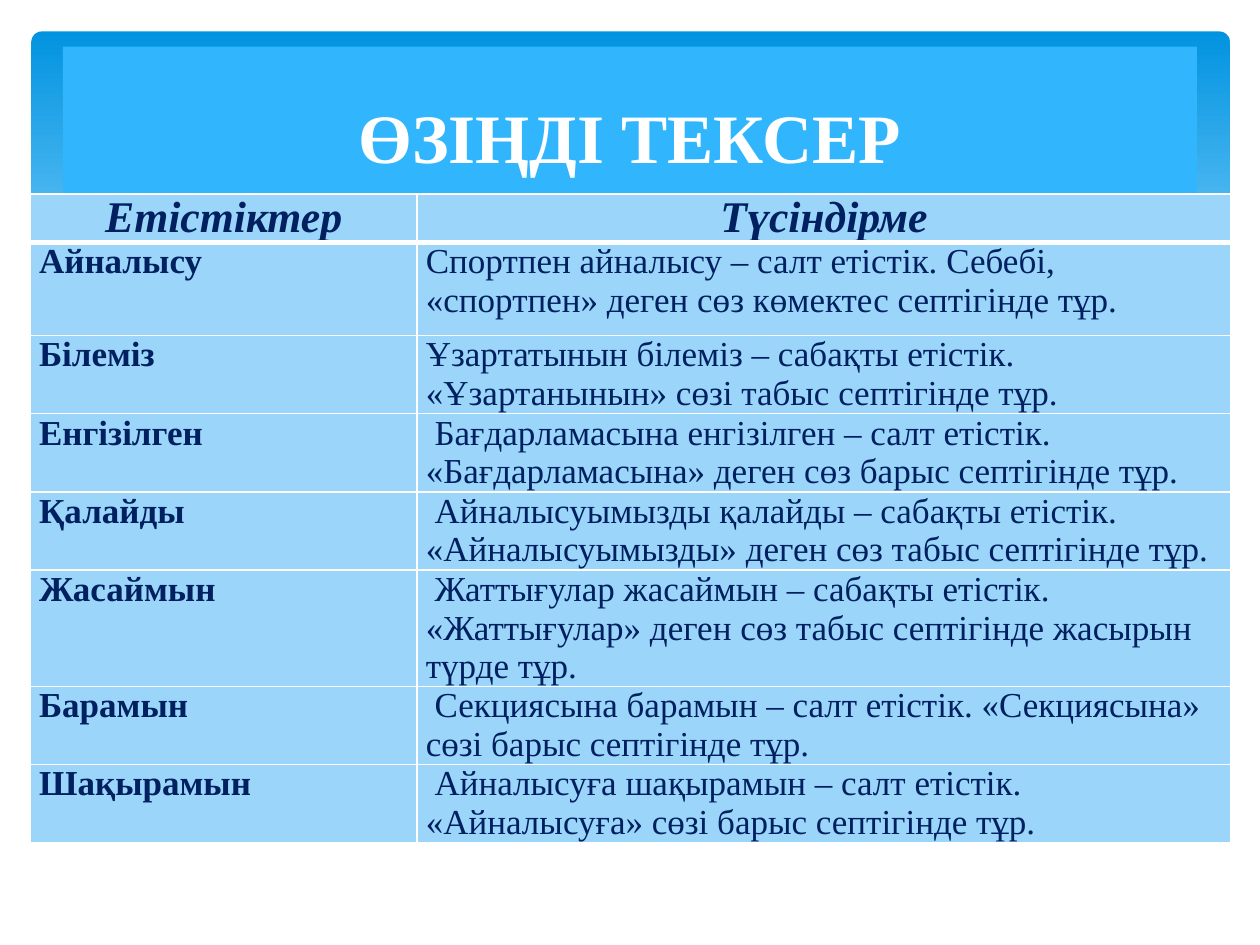
"""Build a Kazakh self-check slide with a table explaining verb types."""
from dataclasses import dataclass

import pptx
import pptx.dml.color
import pptx.enum.shapes
import pptx.enum.text
import pptx.oxml
import pptx.oxml.ns
import pptx.util

Inches = pptx.util.Inches
Pt = pptx.util.Pt
Rgb = pptx.dml.color.RGBColor.from_string
Align = pptx.enum.text.PP_ALIGN
Preset = pptx.enum.shapes.MSO_SHAPE


@dataclass(frozen=True)
class Theme:
    font: str = "Times New Roman"
    banner_top: str = "0293E0"
    banner_bottom: str = "83D3FE"
    title_fill: str = "31B6FD"
    cell_fill: str = "9BD5FA"
    white: str = "FFFFFF"
    navy: str = "002060"
    title_size: float = 39.6
    header_size: int = 25
    body_size: int = 20


theme = Theme()


def style_paragraph(para, size, color, align, bold=False, italic=False):
    para.alignment = align
    para.font.name = theme.font
    para.font.size = Pt(size)
    para.font.bold = bold
    para.font.italic = italic
    para.font.color.rgb = Rgb(color)


def add_borders(cell, top, bottom):
    widths = {"lnL": 1, "lnR": 1, "lnT": top, "lnB": bottom}
    properties = cell._tc.get_or_add_tcPr()
    for position, (side, width) in enumerate(widths.items()):
        line = pptx.oxml.parse_xml(
            f'<a:{side} {pptx.oxml.ns.nsdecls("a")} w="{Pt(width)}"><a:solidFill>'
            f'<a:srgbClr val="{theme.white}"/></a:solidFill></a:{side}>'
        )
        properties.insert(position, line)


rows = [
    ("Етістіктер", "Түсіндірме", 0.38),
    ("Айналысу", "Спортпен айналысу – салт етістік. Себебі,\n«спортпен» деген сөз көмектес септігінде тұр.", 0.74),
    ("Білеміз", "Ұзартатынын білеміз – сабақты етістік. «Ұзартанынын» сөзі табыс септігінде тұр.", 0.62),
    ("Енгізілген", " Бағдарламасына енгізілген – салт етістік. «Бағдарламасына» деген сөз барыс септігінде тұр.", 0.62),
    ("Қалайды", " Айналысуымызды қалайды – сабақты етістік. «Айналысуымызды» деген сөз табыс септігінде тұр.", 0.62),
    ("Жасаймын", " Жаттығулар жасаймын – сабақты етістік. «Жаттығулар» деген сөз табыс септігінде жасырын түрде тұр.", 0.92),
    ("Барамын", " Секциясына барамын – салт етістік. «Секциясына» сөзі барыс септігінде тұр.", 0.62),
    ("Шақырамын", " Айналысуға шақырамын – салт етістік. «Айналысуға» сөзі барыс септігінде тұр.", 0.62),
]

deck = pptx.Presentation()
deck.slide_width = Inches(10)
deck.slide_height = Inches(7.5)
page = deck.slides.add_slide(deck.slide_layouts[6])

banner = page.shapes.add_shape(
    Preset.ROUNDED_RECTANGLE, Inches(0.25), Inches(0.25), Inches(9.51), Inches(2.7)
)
banner.adjustments[0] = 0.03
banner.shadow.inherit = False
banner.line.fill.background()
banner.fill.gradient()
banner.fill.gradient_angle = 270
stops = [(0, theme.banner_top), (0.9, theme.banner_bottom)]
for stop, (position, color) in zip(banner.fill.gradient_stops, stops):
    stop.position = position
    stop.color.rgb = Rgb(color)

title = page.shapes.add_shape(
    Preset.RECTANGLE, Inches(0.5), Inches(0.37), Inches(9), Inches(1.33)
)
title.shadow.inherit = False
title.line.fill.background()
title.fill.solid()
title.fill.fore_color.rgb = Rgb(theme.title_fill)
title.text_frame.word_wrap = True
title.text_frame.margin_top = Inches(0.14)
title.text_frame.vertical_anchor = pptx.enum.text.MSO_ANCHOR.MIDDLE
title.text_frame.text = "ӨЗІҢДІ ТЕКСЕР"
style_paragraph(
    title.text_frame.paragraphs[0], theme.title_size, theme.white, Align.CENTER, bold=True
)

table_height = sum(height for verb, note, height in rows)
table = page.shapes.add_table(
    len(rows), 2, Inches(0.24), Inches(1.54), Inches(9.53), Inches(table_height)
).table
table.horz_banding = False
for column, width in zip(table.columns, (3.07, 6.46)):
    column.width = Inches(width)

for row_index, (verb, note, height) in enumerate(rows):
    table.rows[row_index].height = Inches(height)
    is_header = row_index == 0
    for column_index, text in enumerate((verb, note)):
        cell = table.cell(row_index, column_index)
        cell.margin_left = cell.margin_right = Inches(0.07)
        cell.margin_top = cell.margin_bottom = 0
        cell.fill.solid()
        cell.fill.fore_color.rgb = Rgb(theme.cell_fill)
        add_borders(cell, 3 if row_index == 1 else 1, 3 if is_header else 1)
        cell.text = text
        body_align = Align.JUSTIFY if column_index == 0 else Align.LEFT
        for para in cell.text_frame.paragraphs:
            style_paragraph(
                para,
                theme.header_size if is_header else theme.body_size,
                theme.navy,
                Align.CENTER if is_header else body_align,
                bold=is_header or column_index == 0,
                italic=is_header,
            )

deck.save("out.pptx")
